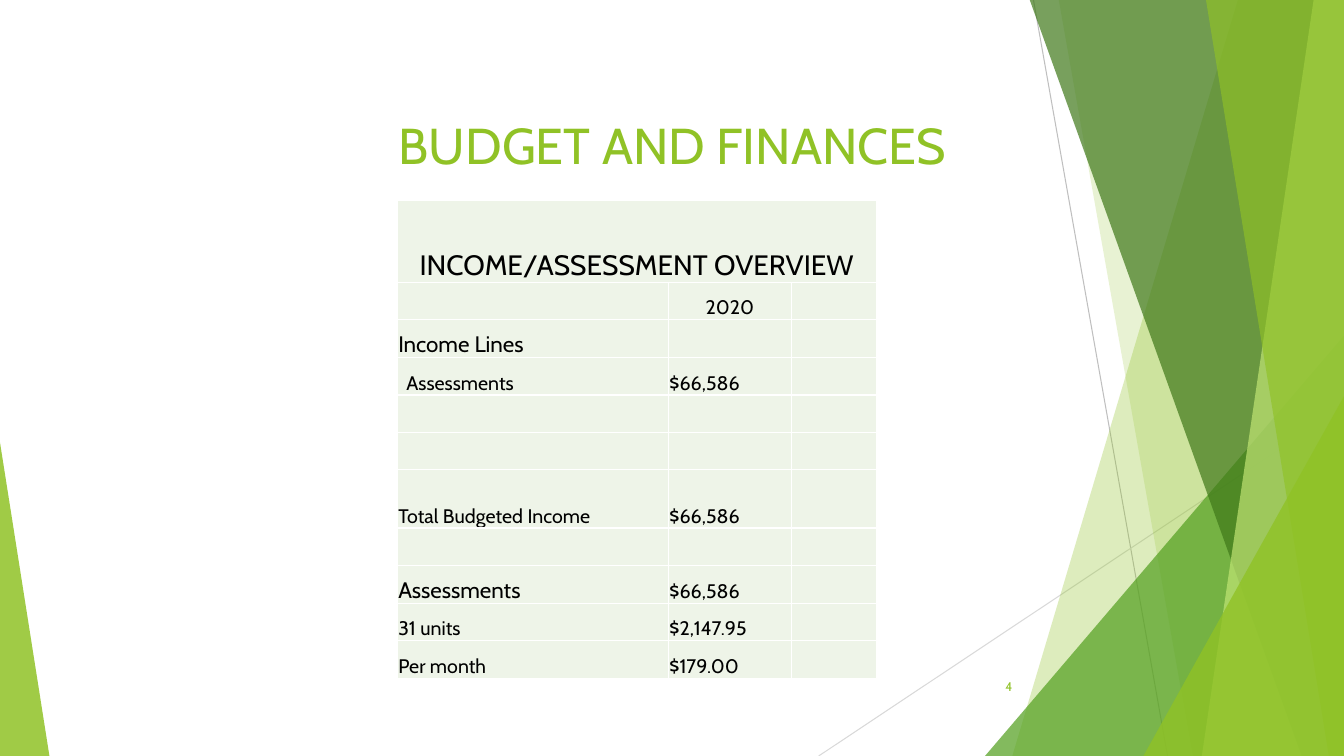
from lxml.etree import SubElement
from pptx import Presentation
from pptx.dml.color import RGBColor
from pptx.enum.shapes import MSO_CONNECTOR, MSO_SHAPE
from pptx.enum.text import MSO_ANCHOR as ANCHOR, PP_ALIGN as ALIGN
from pptx.oxml.ns import qn
from pptx.util import Pt

PX = 9144  # 100 px to the inch
WIDTH, HEIGHT = 1333, 750
FONT = "Cabin"
COLORS = {
    "lime": "90C226", "green": "54A021", "forest": "3F7819", "pale": "C0E474",
    "cell": "EEF4E8", "white": "FFFFFF", "black": "000000",
    "gray": "BFBFBF", "light_gray": "D9D9D9",
}


def px(*lengths):
    return [length * PX for length in lengths]


def rgb(name):
    return RGBColor.from_string(COLORS[name])


def write(frame, text, size, color="black", align=ALIGN.LEFT, anchor=ANCHOR.TOP, indent=0):
    frame.word_wrap = True
    frame.vertical_anchor = anchor
    para = frame.paragraphs[0]
    para.alignment = align
    if indent:
        para._p.get_or_add_pPr().set("marL", str(indent * PX))
    span = para.add_run()
    span.text = text
    span.font.size = Pt(size)
    span.font.name = FONT
    span.font.color.rgb = rgb(color)


def paint(shape, color, opacity):
    """Fill a shape with a see-through colour, without line or shadow."""
    shape.shadow.inherit = False
    shape.line.fill.background()
    shape.fill.solid()
    shape.fill.fore_color.rgb = rgb(color)
    tint = shape._element.spPr.find(qn("a:solidFill"))[0]
    SubElement(tint, qn("a:alpha"), val=str(opacity * 1000))


def add_line(shapes, ends, color):
    line = shapes.add_connector(MSO_CONNECTOR.STRAIGHT, *px(*ends))
    line.line.color.rgb = rgb(color)
    line.line.width = Pt(0.75)
    SubElement(line._element.spPr, qn("a:effectLst"))


def add_band(shapes, top_left, top_right, bottom_left, color, opacity):
    """Add a sloping band that reaches the right edge of the slide."""
    builder = shapes.build_freeform(top_left, -1, scale=PX)
    builder.add_line_segments([(top_right, -1), (WIDTH, HEIGHT), (bottom_left, HEIGHT)])
    paint(builder.convert_to_shape(), color, opacity)


def add_corner(shapes, box, apex, color, opacity):
    """Add a right triangle whose apex is at the left (0) or right (1)."""
    triangle = shapes.add_shape(MSO_SHAPE.ISOSCELES_TRIANGLE, *px(*box))
    triangle.adjustments[0] = apex
    paint(triangle, color, opacity)


def add_backdrop(shapes):
    add_line(shapes, (1025, 0, 1158, HEIGHT), "gray")
    add_line(shapes, (WIDTH, 403, 812, HEIGHT), "light_gray")
    add_band(shapes, 1228, WIDTH, 1004, "lime", 30)
    add_band(shapes, 1050, WIDTH, 1183, "lime", 20)
    add_corner(shapes, (977, 333, 356, 417), 1, "green", 72)
    add_band(shapes, 1021, WIDTH, 1291, "forest", 70)
    add_band(shapes, 1303, WIDTH, 1192, "pale", 70)
    add_band(shapes, 1196, WIDTH, 1318, "lime", 65)
    add_corner(shapes, (1134, 393, 199, 357), 1, "lime", 80)
    add_corner(shapes, (0, 439, 49, 311), 0, "lime", 85)


def add_title(shapes, box, text):
    title = shapes.title
    title.left, title.top, title.width, title.height = px(*box)
    write(title.text_frame, text, 36, "lime", ALIGN.CENTER)
    title._element.getparent().append(title._element)  # bring to front


def add_page_number(shapes, box, number):
    label = shapes.add_textbox(*px(*box))
    write(label.text_frame, number, 9, "lime", ALIGN.RIGHT, ANCHOR.MIDDLE)


def format_cell(cell):
    cell.margin_left, cell.margin_top, cell.margin_right, cell.margin_bottom = px(1, 1, 1, 0)
    cell.vertical_anchor = ANCHOR.BOTTOM
    properties = cell._tc.get_or_add_tcPr()
    for side in ("lnL", "lnR", "lnT", "lnB"):
        border = SubElement(properties, qn("a:" + side), w=str(Pt(1)))
        fill = SubElement(border, qn("a:solidFill"))
        SubElement(fill, qn("a:srgbClr"), val=COLORS["white"])
    cell.fill.solid()
    cell.fill.fore_color.rgb = rgb("cell")


def add_income_table(shapes, box):
    heading, plain, indented = {"size": 16}, {"size": 14}, {"size": 14, "indent": 8}
    lines = [  # height, label, amount, label format
        (81, "", "", plain),
        (37, "", "2020", plain),
        (38, "Income Lines", "", heading),
        (37, "Assessments", "$66,586", indented),
        (37, "", "", plain),
        (37, "", "", plain),
        (58, "Total Budgeted Income", "$66,586", plain),
        (37, "", "", plain),
        (38, "Assessments", "$66,586", heading),
        (37, "31 units", "$2,147.95", plain),
        (37, "Per month", "$179.00", plain),
    ]
    table = shapes.add_table(len(lines), 3, *px(*box)).table
    for column, width in zip(table.columns, px(269, 122, 84)):
        column.width = width
    for cell in table.iter_cells():
        format_cell(cell)
    for row, (height, label, amount, style) in enumerate(lines):
        table.rows[row].height = height * PX
        if label:
            write(table.cell(row, 0).text_frame, label, anchor=ANCHOR.BOTTOM, **style)
        if amount:
            align = ALIGN.CENTER if amount == "2020" else ALIGN.LEFT
            write(table.cell(row, 1).text_frame, amount, 14, align=align, anchor=ANCHOR.BOTTOM)
    header = table.cell(0, 0)
    header.merge(table.cell(0, 2))
    write(header.text_frame, "INCOME/ASSESSMENT OVERVIEW", 20,
          align=ALIGN.CENTER, anchor=ANCHOR.BOTTOM)


def add_budget_slide(deck):
    title_only = deck.slide_layouts.get_by_name("Title Only")
    shapes = deck.slides.add_slide(title_only).shapes
    add_backdrop(shapes)
    add_title(shapes, (189, 108, 956, 82), "BUDGET AND FINANCES")
    add_page_number(shapes, (939, 661, 75, 40), "4")
    add_income_table(shapes, (394, 199, 475, 474))


def main():
    deck = Presentation()
    deck.slide_width, deck.slide_height = px(WIDTH, HEIGHT)
    add_budget_slide(deck)
    deck.save("out.pptx")


if __name__ == "__main__":
    main()
